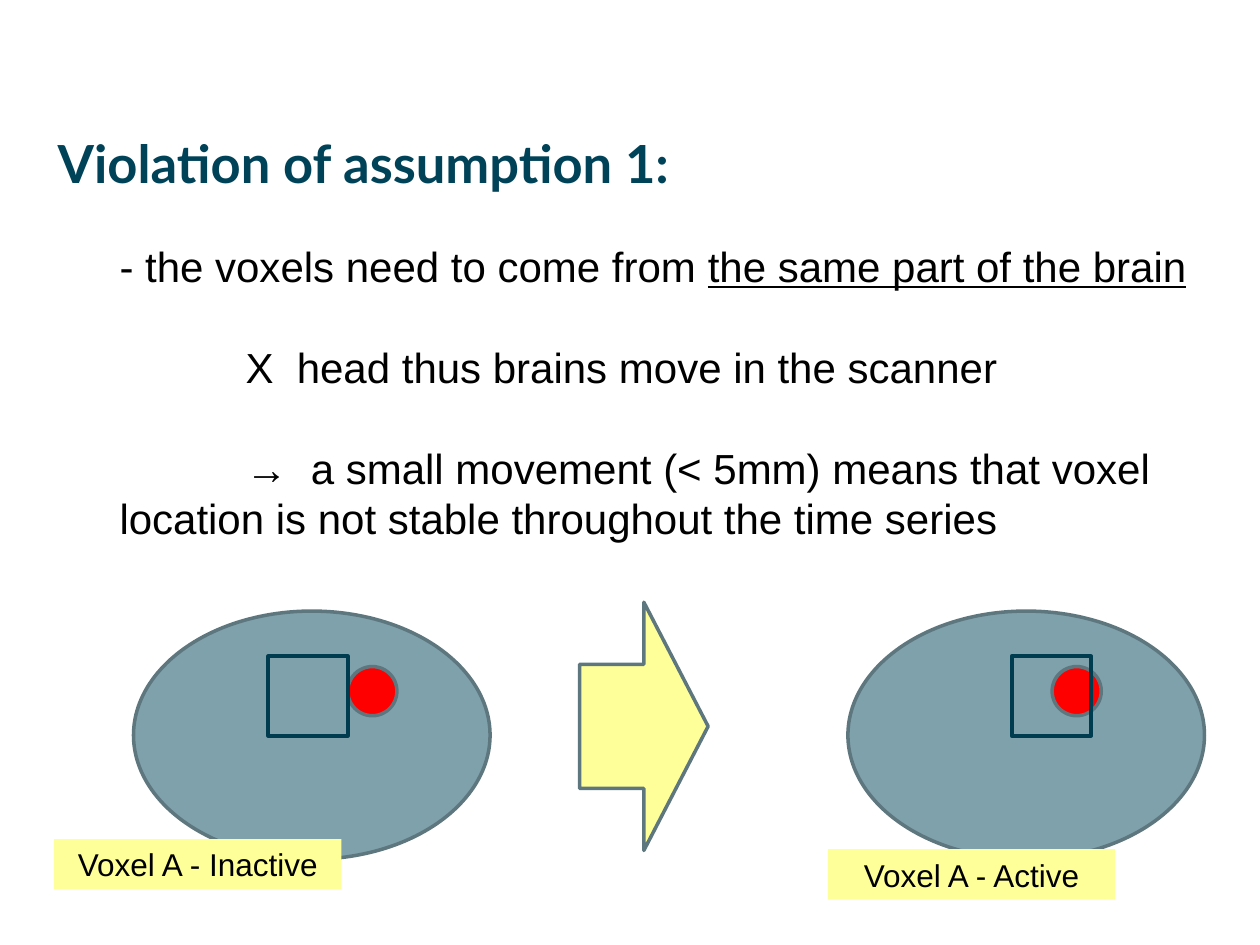
"""Build a slide on how head movement breaks the same-voxel assumption."""
from dataclasses import dataclass
from typing import Optional

from pptx import Presentation
from pptx.dml.color import RGBColor
from pptx.enum.shapes import MSO_SHAPE as Preset
from pptx.enum.text import MSO_ANCHOR as Anchor, PP_ALIGN as Align
from pptx.util import Inches, Pt


@dataclass(frozen=True)
class Theme:
    heading_font: str = "Lato"
    body_font: str = "Arial"
    heading: str = "004359"
    ink: str = "000000"
    brain: str = "7FA1AC"
    outline: str = "5E777F"
    voxel: str = "003C50"
    activity: str = "FF0000"
    highlight: str = "FFFF99"
    heading_size: float = 30
    body_size: float = 24
    label_size: float = 18
    body_pitch: float = 28.8
    thin: float = 2
    thick: float = 2.25


@dataclass(frozen=True)
class Box:
    left: float
    top: float
    width: float
    height: float

    def lengths(self) -> tuple:
        return tuple(Inches(n) for n in (self.left, self.top, self.width, self.height))


@dataclass(frozen=True)
class Brain:
    left: float
    activity_left: float
    voxel_left: float
    label: str
    label_left: float
    label_top: float


@dataclass(frozen=True)
class Statement:
    text: str
    underlined: str = ""
    first_indent: float = 0
    space_before: float = 0


THEME = Theme()
BRAINS = (
    Brain(1.06, 2.76, 2.13, "Voxel A - Inactive", 0.43, 6.66),
    Brain(6.73, 8.35, 8.03, "Voxel A - Active", 6.57, 6.74),
)
STATEMENTS = (
    Statement("- the voxels need to come from ", "the same part of the brain"),
    Statement("X  head thus brains move in the scanner", "", 1, THEME.body_pitch),
    Statement("→  a small movement (< 5mm) means that voxel location is not stable "
              "throughout the time series", "", 1, THEME.body_pitch),
)


def write(paragraph, text: str, *, size: float, font: str = THEME.body_font,
          color: str = THEME.ink, bold: bool = False, underline: bool = False,
          align: Align = Align.LEFT) -> None:
    paragraph.alignment = align
    run = paragraph.add_run()
    run.text = text
    run.font.size = Pt(size)
    run.font.name = font
    run.font.bold = bold
    run.font.underline = underline
    run.font.color.rgb = RGBColor.from_string(color)


def add_frame(slide, box: Box):
    frame = slide.shapes.add_textbox(*box.lengths()).text_frame
    frame.word_wrap = True
    return frame


def add_figure(shapes, preset: Preset, box: Box, fill: Optional[str] = None,
               line: Optional[str] = None, weight: float = THEME.thin):
    shape = shapes.add_shape(preset, *box.lengths())
    shape.shadow.inherit = False
    if fill:
        shape.fill.solid()
        shape.fill.fore_color.rgb = RGBColor.from_string(fill)
    else:
        shape.fill.background()
    if line:
        shape.line.color.rgb = RGBColor.from_string(line)
        shape.line.width = Pt(weight)
    else:
        shape.line.fill.background()
    return shape


def add_statements(slide) -> None:
    frame = add_frame(slide, Box(0.35, 1.86, 9.21, 3.4))
    for index, statement in enumerate(STATEMENTS):
        paragraph = frame.add_paragraph() if index else frame.paragraphs[0]
        properties = paragraph._p.get_or_add_pPr()
        properties.set("marL", str(Inches(0.5)))
        properties.set("indent", str(Inches(statement.first_indent)))
        paragraph.line_spacing = Pt(THEME.body_pitch)
        paragraph.space_before = Pt(statement.space_before)
        write(paragraph, statement.text, size=THEME.body_size)
        if statement.underlined:
            write(paragraph, statement.underlined, size=THEME.body_size, underline=True)


def add_brain(slide, brain: Brain) -> None:
    shapes = slide.shapes.add_group_shape().shapes
    add_figure(shapes, Preset.OVAL, Box(brain.left, 4.85, 2.83, 1.97),
               THEME.brain, THEME.outline)
    add_figure(shapes, Preset.OVAL, Box(brain.activity_left, 5.29, 0.39, 0.39),
               THEME.activity, THEME.outline)
    add_figure(shapes, Preset.RECTANGLE, Box(brain.voxel_left, 5.21, 0.63, 0.63),
               line=THEME.voxel, weight=THEME.thick)


def add_label(slide, brain: Brain) -> None:
    box = Box(brain.label_left, brain.label_top, 2.28, 0.4)
    frame = add_figure(slide.shapes, Preset.RECTANGLE, box, THEME.highlight).text_frame
    frame.word_wrap = True
    frame.vertical_anchor = Anchor.MIDDLE
    write(frame.paragraphs[0], brain.label, size=THEME.label_size, align=Align.CENTER)


def main() -> None:
    presentation = Presentation()
    presentation.slide_width, presentation.slide_height = Inches(10), Inches(7.5)
    slide = presentation.slides.add_slide(presentation.slide_layouts[6])
    title = add_frame(slide, Box(0.36, 0.99, 9.28, 1.42))
    write(title.paragraphs[0], "Violation of assumption 1:", size=THEME.heading_size,
          font=THEME.heading_font, color=THEME.heading, bold=True)
    add_statements(slide)
    for brain in BRAINS:
        add_brain(slide, brain)
    add_figure(slide.shapes, Preset.RIGHT_ARROW, Box(4.6, 4.78, 1.02, 1.97),
               THEME.highlight, THEME.outline)
    for brain in BRAINS:
        add_label(slide, brain)
    presentation.save("out.pptx")


if __name__ == "__main__":
    main()
